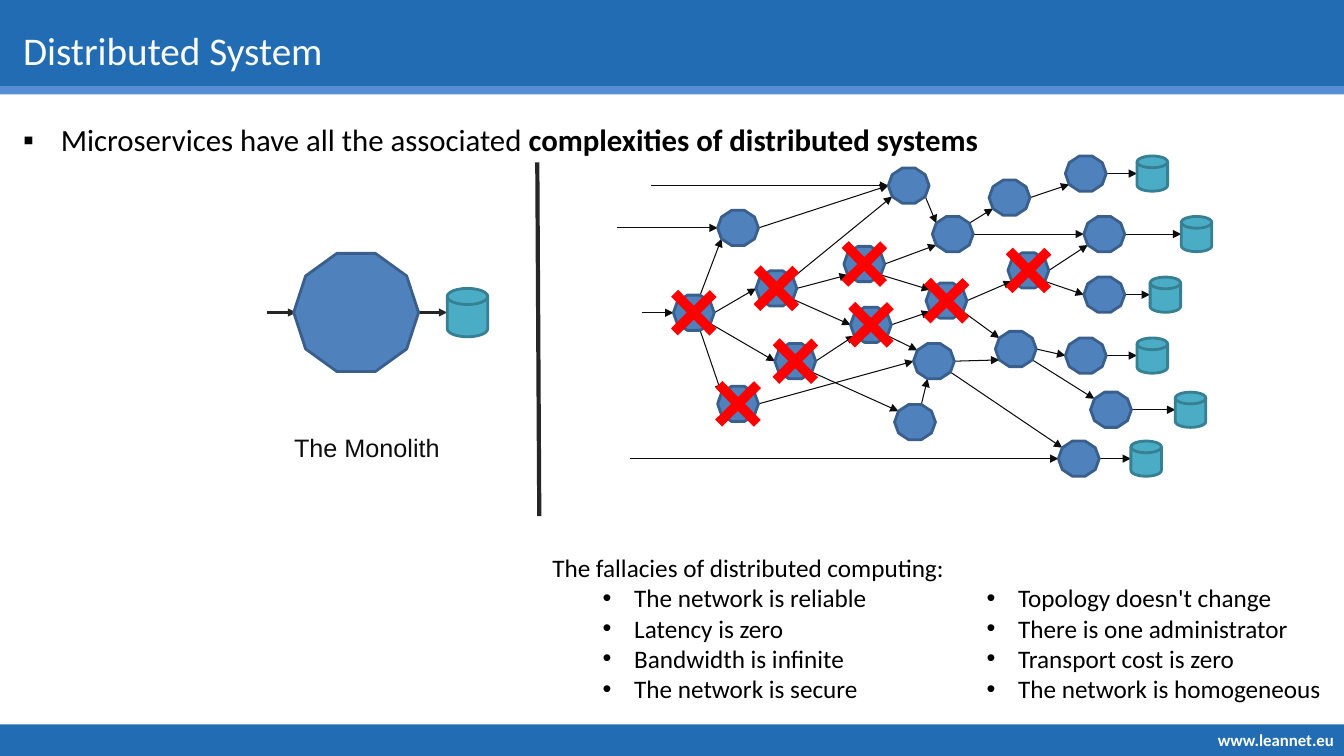
import math
import pptx
import pptx.dml.color
import pptx.enum.shapes
import pptx.enum.text
import pptx.oxml.ns
import pptx.util
from lxml import etree

Pt = pptx.util.Pt
KIND = pptx.enum.shapes.MSO_SHAPE
ALIGN = pptx.enum.text.PP_ALIGN
ANCHOR = pptx.enum.text.MSO_ANCHOR
qn = pptx.oxml.ns.qn

deck = pptx.Presentation()
deck.slide_width, deck.slide_height = Pt(960), Pt(540)
page = deck.slides.add_slide(deck.slide_layouts[6])


def paint(fill, color):
    fill.solid()
    fill.fore_color.rgb = pptx.dml.color.RGBColor.from_string(color)


def write(area, paragraphs, size, color="000000", font="Calibri", align=ALIGN.LEFT,
          anchor=ANCHOR.TOP, level=0, margin=27, hang=27):
    box = page.shapes.add_textbox(*map(Pt, area))
    frame = box.text_frame
    frame.word_wrap = True
    frame.vertical_anchor = anchor
    for index, (bullet, pieces) in enumerate(paragraphs):
        para = frame.add_paragraph() if index else frame.paragraphs[0]
        para.alignment = align
        if bullet:
            para.level = level
            properties = para._p.get_or_add_pPr()
            properties.set("marL", str(Pt(margin)))
            properties.set("indent", str(-Pt(hang)))
            etree.SubElement(properties, qn("a:buFont")).set("typeface", "Arial")
            etree.SubElement(properties, qn("a:buChar")).set("char", bullet)
        for text, bold in pieces:
            span = para.add_run()
            span.text = text
            span.font.name, span.font.size, span.font.bold = font, Pt(size), bold
            paint(span.font.fill, color)


BLUE, NODE, NODE_EDGE, STORE, STORE_EDGE = "226CB3", "4F81BD", "3A5F8C", "4BACC6", "377F92"
INK, DARK = "0D0D0D", "262626"
NODE_WIDTH, ROW_HEIGHT, STORE_WIDTH, CROSS_SIZE = 29.2, 25.2, 21.8, 39

services = {
    "a": (481, 223.4), "b": (512.6, 162.8), "c": (540, 206), "d": (553.5, 258),
    "e": (512.6, 288.5), "f": (602.8, 188.6), "g": (607.5, 232), "h": (639, 301.5),
    "i": (652.5, 258), "j": (661.5, 214.8), "k": (666, 167.2), "l": (634.5, 132.6),
    "m": (720, 193.2), "n": (711, 249.3), "o": (774.2, 210.5), "p": (774.2, 167.2),
    "q": (761, 254), "r": (779, 292.7), "s": (761, 124), "t": (756, 327.6),
    "u": (706.5, 141.2),
}
entries = {"a": 458.6, "b": 440.6, "l": 465, "t": 450}
stores = {"q": 812.2, "o": 821.5, "r": 839.5, "t": 807.8, "p": 843.8, "s": 812.2}
calls = ("a9b5 a1c6 a2d6 a3e7 c1f5 b1l6 c0l5 c2g6 d1g5 l2k7 f1k5 k0u5 f2j7 g1j5 "
         "g2i7 e1i6 d2h7 h9i4 j1m5 j2n7 i1n5 k1p6 u1s5 m2o6 n1q6 n2r7 i2t7 m1p5")
failed = "mjgfcdea"

corners = {}
for name, (left, middle) in services.items():
    for corner in range(10):
        angle = math.radians(36 * (corner - 1))
        corners[name + str(corner)] = (
            left + NODE_WIDTH / 2 * (1 + math.cos(angle)),
            middle + ROW_HEIGHT / 2 * 1.05 * math.sin(angle))

figures = [
    (KIND.RECTANGLE, 0, 0, 960, 62, BLUE, None),
    (KIND.RECTANGLE, 0, 517.5, 960, 22.5, BLUE, None),
    (KIND.RECTANGLE, 0, 61.6, 960, 5.8, "558ED5", None),
    (KIND.DECAGON, 209.8, 181, 89.2, 84.4, NODE, NODE_EDGE),
    (KIND.FLOWCHART_MAGNETIC_DISK, 319.4, 206, 29, 34.6, STORE, STORE_EDGE),
]
lines = [
    ((299, 223.2), (319.4, 223.2), DARK, 1.5, True),
    ((190.8, 223.2), (211.5, 223.2), DARK, 1.5, True),
    ((383.8, 116), (385.2, 368.6), DARK, 3, False),
]
for left, middle in services.values():
    figures.append((KIND.DECAGON, left, middle - ROW_HEIGHT / 2,
                    NODE_WIDTH, ROW_HEIGHT, NODE, NODE_EDGE))
for name, left in stores.items():
    middle = services[name][1]
    figures.append((KIND.FLOWCHART_MAGNETIC_DISK, left, middle - ROW_HEIGHT / 2,
                    STORE_WIDTH, ROW_HEIGHT, STORE, STORE_EDGE))
    lines.append((corners[name + "1"], (left, middle), INK, 0.75, True))
for name, start in entries.items():
    lines.append(((start, services[name][1]), corners[name + "6"], INK, 0.75, True))
for call in calls.split():
    lines.append((corners[call[:2]], corners[call[2:]], INK, 0.75, True))

for start, end, color, width, arrow in lines:
    line = page.shapes.add_connector(
        pptx.enum.shapes.MSO_CONNECTOR.STRAIGHT, *map(Pt, start + end))
    paint(line.line.fill, color)
    line.line.width = Pt(width)
    if arrow:
        etree.SubElement(line.line._get_or_add_ln(), qn("a:tailEnd")).set("type", "triangle")
    etree.SubElement(line._element.spPr, qn("a:effectLst"))

for name in failed:
    left, middle = services[name]
    figures.append((KIND.CROSS, left + (NODE_WIDTH - CROSS_SIZE) / 2, middle - CROSS_SIZE / 2,
                    CROSS_SIZE, CROSS_SIZE, "FF0000", None))

for kind, left, top, width, height, fill, edge in figures:
    shape = page.shapes.add_shape(kind, Pt(left), Pt(top), Pt(width), Pt(height))
    shape.shadow.inherit = False
    paint(shape.fill, fill)
    if edge:
        paint(shape.line.fill, edge)
        shape.line.width = Pt(2)
    else:
        shape.line.fill.background()
    if kind == KIND.CROSS:
        shape.adjustments[0] = 0.41
        shape.rotation = 45.4

write((9.4, 9.4, 941, 52.6), [("", [("Distributed System", False)])], 28,
      color="FAFBF9", anchor=ANCHOR.MIDDLE)
write((9.4, 82.8, 941, 40),
      [("▪", [("Microservices have all the associated ", False),
              ("complexities of distributed systems", True)])], 22)
write((169.2, 303.6, 185.8, 32), [("", [("The Monolith", False)])], 18,
      color=INK, font="Arial", align=ALIGN.CENTER, anchor=ANCHOR.MIDDLE)
write((817, 517.5, 143, 22.5), [("", [("www.leannet.eu", True)])], 12,
      color="FFFFFF", align=ALIGN.RIGHT, anchor=ANCHOR.MIDDLE)

heading = [("", [("The fallacies of distributed computing:", False)])]
network_fallacies = ["The network is reliable", "Latency is zero",
                     "Bandwidth is infinite", "The network is secure"]
system_fallacies = ["Topology doesn't change", "There is one administrator",
                    "Transport cost is zero", "The network is homogeneous"]
for left, top, width, opening, fallacies in [
        (387.4, 391, 319.6, heading, network_fallacies),
        (661.7, 412.6, 298, [], system_fallacies)]:
    bullets = [("•", [(fallacy, False)]) for fallacy in fallacies]
    write((left, top, width, 508 - top), opening + bullets, 18,
          level=1, margin=58.5, hang=22.5)

deck.save("out.pptx")
